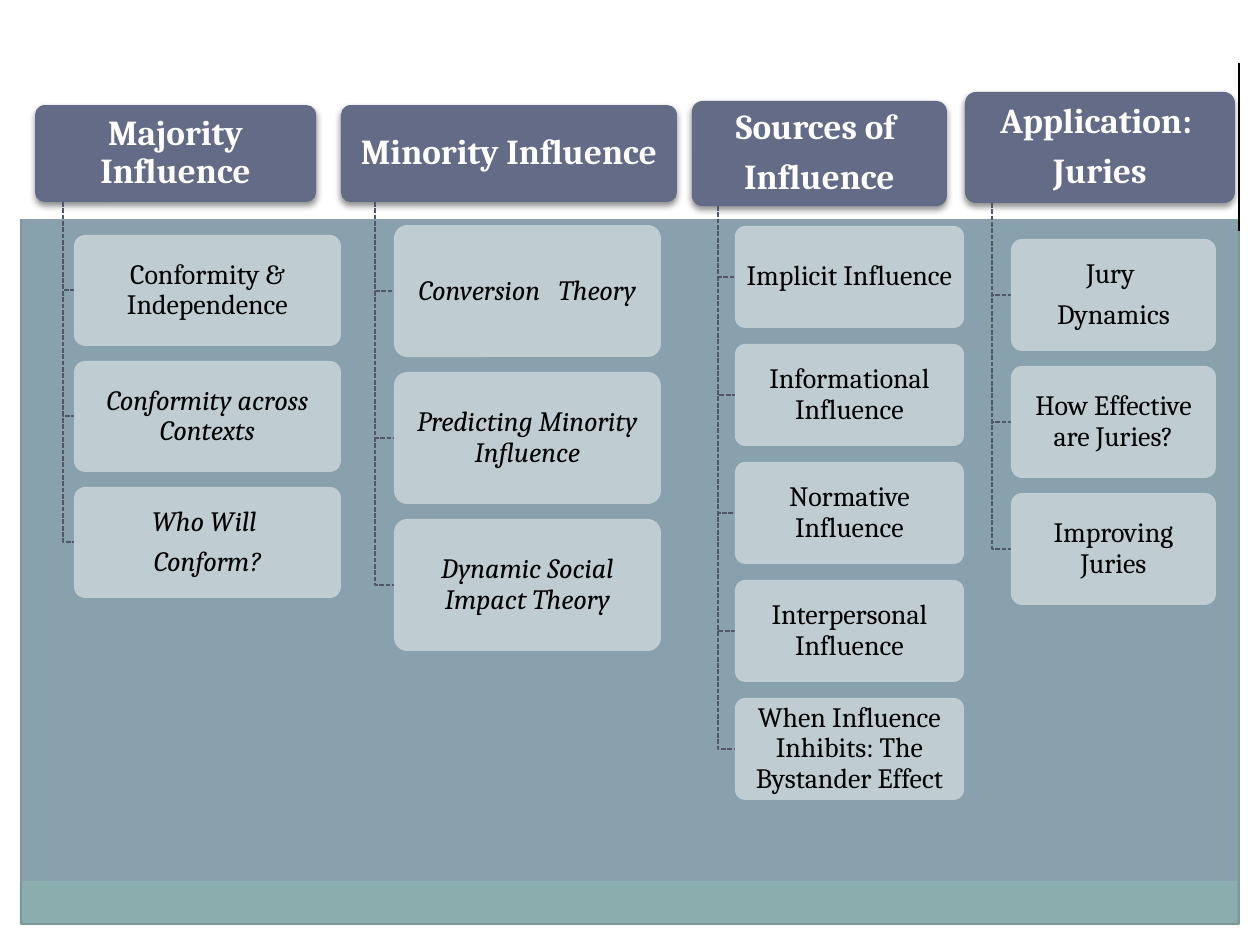
import dataclasses

import lxml.etree
import pptx
import pptx.dml.color
import pptx.enum.dml
import pptx.enum.shapes
import pptx.enum.text
import pptx.oxml.ns
import pptx.util

EMU_PER_PX = 914400 / 126
WIDTH, HEIGHT = 1260, 945
MARGIN = 21
TRUNK_SHARE = 0.1


@dataclasses.dataclass(frozen=True)
class Theme:
    font: str = "Cambria"
    heading_size: int = 20
    topic_size: int = 16
    background: str = "88A1AD"
    white: str = "FFFFFF"
    black: str = "000000"
    footer: str = "8CADAE"
    border: str = "7C999A"
    heading: str = "646B86"
    topic: str = "C5D1D7"
    branch: str = "50566B"


THEME = Theme()


@dataclasses.dataclass(frozen=True)
class Column:
    heading: str
    heading_box: tuple
    topic_box: tuple
    pitch: int
    topics: tuple
    italic_topics: tuple = ()


COLUMNS = (
    Column("Majority Influence", (35, 105, 281, 97), (74, 235, 267, 111), 126,
           ("Conformity & Independence", "Conformity across Contexts",
            "Who Will \nConform?"), (1, 2)),
    Column("Minority Influence", (341, 105, 336, 97), (394, 225, 267, 132), 147,
           ("Conversion   Theory", "Predicting Minority Influence",
            "Dynamic Social Impact Theory"), (0, 1, 2)),
    Column("Sources of \nInfluence", (692, 101, 255, 105), (735, 226, 229, 102), 118,
           ("Implicit Influence", "Informational Influence", "Normative Influence",
            "Interpersonal Influence",
            "When Influence Inhibits: The Bystander Effect")),
    Column("Application: \nJuries", (965, 92, 270, 111), (1011, 239, 205, 112), 127,
           ("Jury \nDynamics", "How Effective are Juries?", "Improving Juries")),
)


def px(length):
    return pptx.util.Emu(round(length * EMU_PER_PX))


def color(value):
    return pptx.dml.color.RGBColor.from_string(value)


def add_child(parent, tag, **attributes):
    return lxml.etree.SubElement(parent, pptx.oxml.ns.qn(tag), attributes)


def style_line(line, value, points):
    line.color.rgb = color(value)
    line.width = pptx.util.Pt(points)


def add_box(slide, box, fill=None, rounded=False):
    kinds = pptx.enum.shapes.MSO_SHAPE
    kind = kinds.ROUNDED_RECTANGLE if rounded else kinds.RECTANGLE
    shape = slide.shapes.add_shape(kind, *map(px, box))
    shape.shadow.inherit = False
    shape.line.fill.background()
    if rounded:
        shape.adjustments[0] = 0.1
    if fill:
        shape.fill.solid()
        shape.fill.fore_color.rgb = color(fill)
    else:
        shape.fill.background()
    return shape


def write_text(shape, text, size, value, insets, bold=False, italic=False):
    frame = shape.text_frame
    frame.text = text
    frame.word_wrap = True
    frame.vertical_anchor = pptx.enum.text.MSO_ANCHOR.MIDDLE
    frame.margin_left = frame.margin_right = px(insets[0])
    frame.margin_top = frame.margin_bottom = px(insets[1])
    for paragraph in frame.paragraphs:
        paragraph.alignment = pptx.enum.text.PP_ALIGN.CENTER
        paragraph.line_spacing = 0.9
        paragraph.space_after = pptx.util.Pt(size * 0.35)
        for run in paragraph.runs:
            run.font.name = THEME.font
            run.font.size = pptx.util.Pt(size)
            run.font.color.rgb = color(value)
            run.font.bold = bold
            run.font.italic = italic


def add_heading(slide, box, text):
    shape = add_box(slide, box, THEME.heading, rounded=True)
    effects = shape.element.spPr.find(pptx.oxml.ns.qn("a:effectLst"))
    shadow = add_child(effects, "a:outerShdw", blurRad=str(pptx.util.Pt(4)),
                       dist=str(pptx.util.Pt(2)), dir="5400000", rotWithShape="0")
    shade = add_child(shadow, "a:srgbClr", val=THEME.black)
    add_child(shade, "a:alpha", val="45000")
    write_text(shape, text, THEME.heading_size, THEME.white, (5, 4), bold=True)


def add_topic(slide, box, text, italic):
    shape = add_box(slide, box, THEME.topic, rounded=True)
    solid = shape.element.spPr.find(pptx.oxml.ns.qn("a:solidFill"))
    add_child(solid[0], "a:alpha", val="90000")
    write_text(shape, text, THEME.topic_size, THEME.black, (4, 3), italic=italic)


def add_branch(slide, trunk, top, right, middle):
    builder = slide.shapes.build_freeform(trunk, top, scale=EMU_PER_PX)
    builder.add_line_segments([(trunk, middle), (right, middle)], close=False)
    shape = builder.convert_to_shape()
    shape.shadow.inherit = False
    shape.fill.background()
    style_line(shape.line, THEME.branch, 0.9)
    shape.line.dash_style = pptx.enum.dml.MSO_LINE.SQUARE_DOT


def add_column(slide, column):
    left, top, width, height = column.heading_box
    topic_left, first_top, topic_width, topic_height = column.topic_box
    add_heading(slide, column.heading_box, column.heading)
    trunk = round(left + width * TRUNK_SHARE)
    for index, topic in enumerate(column.topics):
        topic_top = first_top + index * column.pitch
        add_branch(slide, trunk, top + height, topic_left,
                   topic_top + topic_height // 2)
        add_topic(slide, (topic_left, topic_top, topic_width, topic_height),
                  topic, index in column.italic_topics)


def add_backdrop(slide):
    slide.background.fill.solid()
    slide.background.fill.fore_color.rgb = color(THEME.background)
    for box in ((0, HEIGHT - MARGIN, WIDTH, MARGIN),
                (WIDTH - MARGIN, 0, MARGIN, HEIGHT),
                (0, 0, MARGIN, HEIGHT)):
        add_box(slide, box, THEME.white)
    add_box(slide, (20, 881, 1217, 43), THEME.footer)
    border = add_box(slide, (MARGIN, MARGIN, WIDTH - 2 * MARGIN, HEIGHT - 2 * MARGIN))
    style_line(border.line, THEME.border, 0.75)
    add_box(slide, (0, 0, WIDTH, 219), THEME.white)


def add_edge_line(slide, x, top, bottom):
    line = slide.shapes.add_connector(pptx.enum.shapes.MSO_CONNECTOR.STRAIGHT,
                                      px(x), px(top), px(x), px(bottom))
    style_line(line.line, THEME.black, 0.75)
    add_child(line.element.spPr, "a:effectLst")


def main():
    presentation = pptx.Presentation()
    presentation.slide_width = px(WIDTH)
    presentation.slide_height = px(HEIGHT)
    slide = presentation.slides.add_slide(presentation.slide_layouts[6])
    add_backdrop(slide)
    for column in COLUMNS:
        add_column(slide, column)
    add_edge_line(slide, WIDTH - MARGIN, 63, 231)
    presentation.save("out.pptx")


if __name__ == "__main__":
    main()
